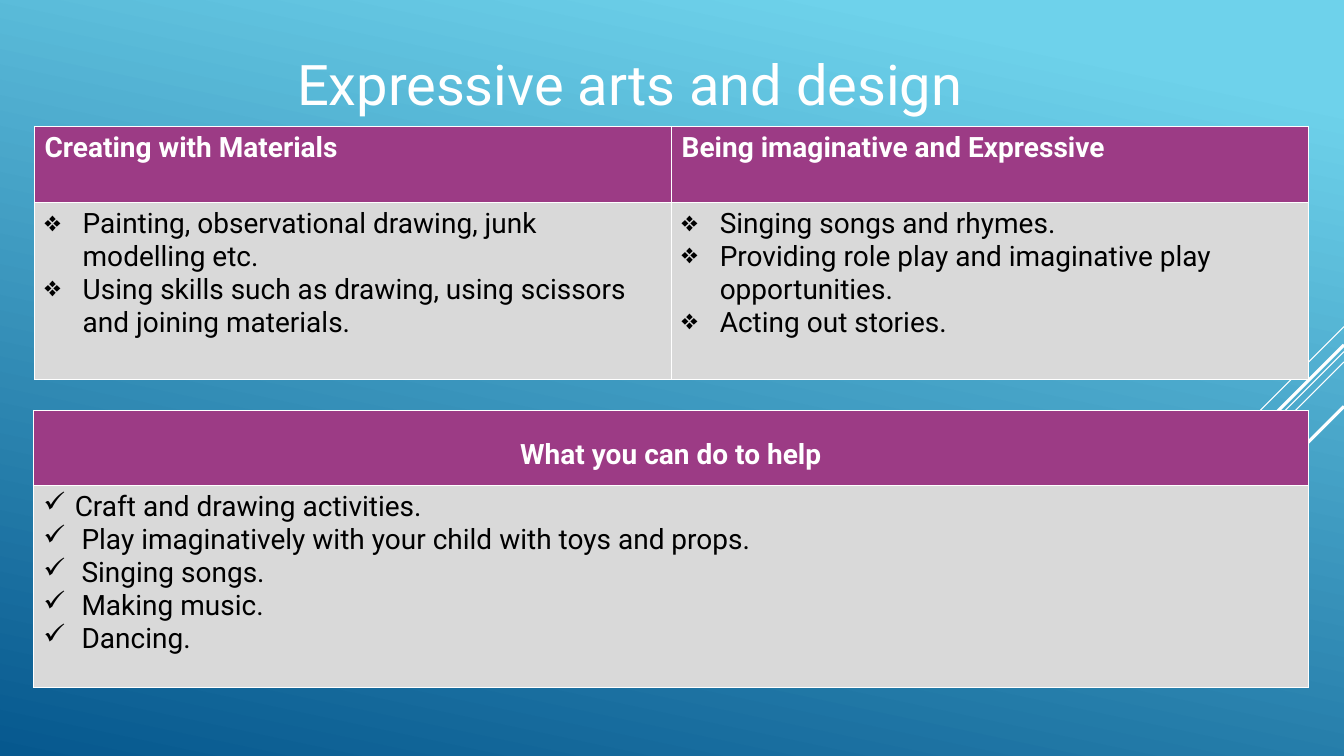
from lxml.etree import SubElement
from pptx import Presentation
from pptx.dml.color import RGBColor
from pptx.enum.shapes import MSO_CONNECTOR as Connector
from pptx.enum.text import MSO_ANCHOR as Anchor, PP_ALIGN as Align
from pptx.oxml import parse_xml
from pptx.oxml.ns import nsdecls, qn
from pptx.util import Cm, Pt

COLORS = {"sky": "6ED2EB", "deep": "06588E", "white": "FFFFFF",
          "purple": "9C3B85", "grey": "D9D9D9", "black": "000000"}
FONT = "Roboto"
PAGE_WIDTH, PAGE_HEIGHT = Cm(33.87), Cm(19.05)
INDENT = Cm(0.96)

# Boxes are left, top, width, height
TITLE_BOX = (Cm(1.9), Cm(0.76), Cm(27.94), Cm(2.69))
AREAS_BOX = (Cm(0.87), Cm(3.18), Cm(32.11), Cm(6.38))
HELP_BOX = (Cm(0.84), Cm(10.34), Cm(32.13), Cm(6.99))

# Diagonals start at the right edge: top, run to the left and down, weight
DIAGONALS = [(8.23, 2.54, 0.75), (8.86, 8.28, 0.75), (9.12, 5.27, 0.75),
             (8.69, 4.85, 2.25), (10.24, 3.53, 2.25)]

AREAS = {
    "Creating with Materials": [
        "Painting, observational drawing, junk modelling etc.",
        "Using skills such as drawing, using scissors and joining materials."],
    "Being imaginative and Expressive": [
        "Singing songs and rhymes.",
        "Providing role play and imaginative play opportunities.",
        "Acting out stories."],
}
HELP = {
    "What you can do to help": [
        "Craft and drawing activities.",
        "Play imaginatively with your child with toys and props.",
        "Singing songs.", "Making music.", "Dancing."],
}


def color(name):
    return RGBColor.from_string(COLORS[name])


def style_text(para, size, color_name, bold=False):
    for span in para.runs:
        span.font.name = FONT
        span.font.size = Pt(size)
        span.font.bold = bold
        span.font.color.rgb = color(color_name)


def add_bullet(para, mark, indent):
    props = para._p.get_or_add_pPr()
    props.set("marL", str(indent))
    props.set("indent", str(-indent))
    SubElement(props, qn("a:buChar")).set("char", mark)


def style_cell(cell, fill_name):
    cell.fill.solid()
    cell.fill.fore_color.rgb = color(fill_name)
    props = cell._tc.get_or_add_tcPr()
    for index, side in enumerate(("lnL", "lnR", "lnT", "lnB")):
        props.insert(index, parse_xml(
            f'<a:{side} {nsdecls("a")} w="{Pt(0.75)}"><a:solidFill>'
            f'<a:srgbClr val="{COLORS["white"]}"/></a:solidFill></a:{side}>'))


def paint_background(page):
    fill = page.background.fill
    fill.gradient()
    fill.gradient_angle = 258
    for stop, place, name in zip(fill.gradient_stops, (0.1, 1), ("sky", "deep")):
        stop.position = place
        stop.color.rgb = color(name)


def add_diagonals(page):
    for top, run, weight in DIAGONALS:
        line = page.shapes.add_connector(
            Connector.STRAIGHT, PAGE_WIDTH, Cm(top),
            PAGE_WIDTH - Cm(run), Cm(top + run))
        line.line.color.rgb = color("white")
        line.line.width = Pt(weight)
        SubElement(line._element.spPr, qn("a:effectLst"))


def add_title(page, box, text):
    title = page.shapes.title
    title.left, title.top, title.width, title.height = box
    frame = title.text_frame
    frame.text = text
    frame.vertical_anchor = Anchor.MIDDLE
    frame.paragraphs[0].alignment = Align.CENTER
    style_text(frame.paragraphs[0], 40, "white")


def add_list_table(page, box, columns, header_height, mark):
    """Place a table with a purple heading over a bullet list per column."""
    left, top, width, height = box
    table = page.shapes.add_table(2, len(columns), *box).table
    table.horz_banding = False
    table.rows[0].height = header_height
    table.rows[1].height = height - header_height
    for index, (heading, items) in enumerate(columns.items()):
        table.columns[index].width = width // len(columns)
        head, body = table.cell(0, index), table.cell(1, index)
        style_cell(head, "purple")
        style_cell(body, "grey")
        head.text_frame.text = heading
        style_text(head.text_frame.paragraphs[0], 20, "white", bold=True)
        body.text_frame.text = "\n".join(items)
        for para in body.text_frame.paragraphs:
            add_bullet(para, mark, INDENT)
            style_text(para, 20, "black")
    return table


def main():
    deck = Presentation()
    deck.slide_width, deck.slide_height = PAGE_WIDTH, PAGE_HEIGHT
    page = deck.slides.add_slide(deck.slide_layouts[5])
    paint_background(page)
    add_diagonals(page)
    add_title(page, TITLE_BOX, "Expressive arts and design")

    # The help heading is centred and set lower; its first item sits closer
    help_table = add_list_table(page, HELP_BOX, HELP, Cm(1.9), "✓")
    heading = help_table.cell(0, 0)
    heading.margin_top = Cm(0.71)
    heading.text_frame.paragraphs[0].alignment = Align.CENTER
    first = help_table.cell(1, 0).text_frame.paragraphs[0]
    first._p.pPr.set("marL", str(Cm(0.79)))
    first._p.pPr.set("indent", str(-Cm(0.79)))

    add_list_table(page, AREAS_BOX, AREAS, Cm(1.93), "❖")
    deck.save("out.pptx")


if __name__ == "__main__":
    main()
